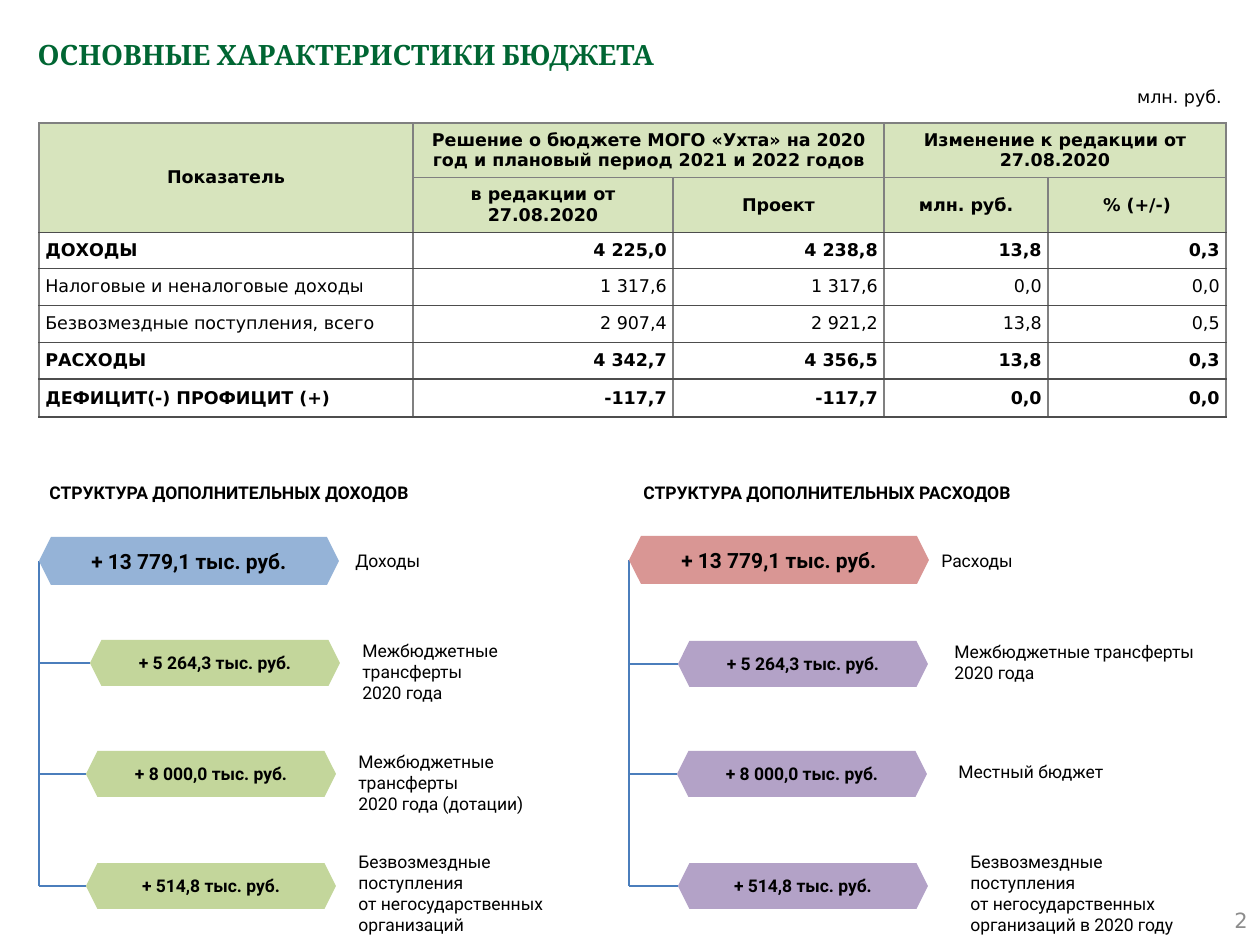
from lxml import etree
from pptx import Presentation, util as u
from pptx.dml.color import RGBColor
from pptx.enum import shapes, text
from pptx.oxml.ns import qn

PX = 914400 // 126
COLORS = {
    "title": "006633", "text": "000000", "number": "8C8C8C", "header": "D7E4BD",
    "row_line": "4D4D4D", "column_line": "808080", "branch": "4B7EBC",
    "income": "95B3D7", "income_part": "C3D69B",
    "expense": "D99694", "expense_part": "B3A2C7",
}
LEFT, CENTER, RIGHT = text.PP_ALIGN.LEFT, text.PP_ALIGN.CENTER, text.PP_ALIGN.RIGHT
TOP, MIDDLE = text.MSO_ANCHOR.TOP, text.MSO_ANCHOR.MIDDLE

COLUMNS = [374, 260, 211, 164, 178]
ROWS = [53, 54, 36, 37, 37, 37, 38]
INDICATORS = [
    ["Показатель", "Решение о бюджете МОГО «Ухта» на 2020 год и плановый период 2021 и 2022 годов",
     "", "Изменение к редакции от 27.08.2020", ""],
    ["", "в редакции от 27.08.2020", "Проект", "млн. руб.", "% (+/-)"],
    ["ДОХОДЫ", "4 225,0", "4 238,8", "13,8", "0,3"],
    ["Налоговые и неналоговые доходы", "1 317,6", "1 317,6", "0,0", "0,0"],
    ["Безвозмездные поступления, всего", "2 907,4", "2 921,2", "13,8", "0,5"],
    ["РАСХОДЫ", "4 342,7", "4 356,5", "13,8", "0,3"],
    ["ДЕФИЦИТ(-) ПРОФИЦИТ (+)", "-117,7", "-117,7", "0,0", "0,0"],
]
HEADER_ROWS = 2
PLAIN_ROWS = (3, 4)
MERGES = [((0, 0), (1, 0)), ((0, 1), (0, 2)), ((0, 3), (0, 4))]

TOTAL = "+ 13 779,1 тыс. руб."
PART_AMOUNTS = ["+ 5 264,3 тыс. руб.", "+ 8 000,0 тыс. руб.", "+ 514,8 тыс. руб."]
TOTAL_SIZE, PART_SIZE = (300, 48), (250, 46)
# parts: badge position, label box (left, top, width), label paragraphs
STRUCTURES = [
    {"heading": ("СТРУКТУРА ДОПОЛНИТЕЛЬНЫХ ДОХОДОВ", 37), "colors": ("income", "income_part"),
     "total": (39, 537), "name": ("Доходы", 343),
     "parts": [
         ((90, 640), (350, 634, 258), ["Межбюджетные трансферты", "2020 года"]),
         ((86, 751), (346, 745, 258), ["Межбюджетные трансферты", "2020 года (дотации)"]),
         ((86, 863), (346, 845, 258),
          ["Безвозмездные поступления", "от негосударственных организаций"])]},
    {"heading": ("СТРУКТУРА ДОПОЛНИТЕЛЬНЫХ РАСХОДОВ", 631), "colors": ("expense", "expense_part"),
     "total": (629, 536), "name": ("Расходы", 929),
     "parts": [
         ((678, 641), (942, 635, 271), ["Межбюджетные трансферты", "2020 года"]),
         ((677, 751), (946, 755, 311), ["Местный бюджет"]),
         ((678, 863), (958, 845, 258),
          ["Безвозмездные поступления", "от негосударственных организаций в 2020 году"])]},
]


def emu(*lengths):
    return [u.Emu(length * PX) for length in lengths]


def rgb(color):
    return RGBColor.from_string(COLORS[color])


def set_values(target, **values):
    for name, value in values.items():
        setattr(target, name, value)


def write(frame, paragraphs, size=10, font="Roboto", color="text", bold=False,
          align=LEFT, spacing=None):
    for index, words in enumerate(paragraphs):
        paragraph = frame.add_paragraph() if index else frame.paragraphs[0]
        set_values(paragraph, alignment=align, line_spacing=spacing)
        run = paragraph.add_run()
        run.text = words
        set_values(run.font, size=u.Pt(size), name=font, bold=bold)
        run.font.color.rgb = rgb(color)


def add_title(slide, words):
    title = slide.shapes.title
    left, top, width, height = emu(25, 25, 1211, 100)
    set_values(title, left=left, top=top, width=width, height=height)
    title.text_frame.vertical_anchor = TOP
    write(title.text_frame, [words], 16, "Cambria", "title", True, spacing=1.2)


def add_text(slide, box, paragraphs, anchor=TOP, wrap=True, **style):
    frame = slide.shapes.add_textbox(*emu(*box)).text_frame
    set_values(frame, word_wrap=wrap, vertical_anchor=anchor)
    write(frame, paragraphs, **style)


def add_badge(slide, position, extent, amount, color, size):
    badge = slide.shapes.add_shape(shapes.MSO_SHAPE.HEXAGON, *emu(*position, *extent))
    badge.shadow.inherit = False
    badge.fill.solid()
    badge.fill.fore_color.rgb = rgb(color)
    badge.line.fill.background()
    set_values(badge.text_frame, word_wrap=False, vertical_anchor=MIDDLE, margin_left=0,
               margin_right=0, margin_top=0, margin_bottom=0)
    write(badge.text_frame, [amount], size, bold=True, align=CENTER)


def add_branch(slide, start, end):
    branch = slide.shapes.add_connector(shapes.MSO_CONNECTOR.STRAIGHT, *emu(*start, *end))
    branch.line.color.rgb = rgb("branch")
    branch.line.width = u.Pt(0.75)
    etree.SubElement(branch.element.spPr, qn("a:effectLst"))


def set_borders(cell, **sides):
    properties = cell._tc.get_or_add_tcPr()
    for side, color in sides.items():
        line = etree.SubElement(properties, qn(f"a:ln{side}"), w=str(u.Pt(1)))
        fill = etree.SubElement(line, qn("a:solidFill"))
        etree.SubElement(fill, qn("a:srgbClr"), val=COLORS[color])


def add_indicators(slide):
    table = slide.shapes.add_table(
        len(ROWS), len(COLUMNS), *emu(39, 123, sum(COLUMNS), sum(ROWS))).table
    set_values(table, first_row=False, horz_banding=False)
    for column, width in zip(table.columns, emu(*COLUMNS)):
        column.width = width
    for row, height in zip(table.rows, emu(*ROWS)):
        row.height = height
    for first, last in MERGES:
        table.cell(*first).merge(table.cell(*last))
    margin = u.Inches(0.05)
    for r, values in enumerate(INDICATORS):
        header = r < HEADER_ROWS
        for c, value in enumerate(values):
            cell = table.cell(r, c)
            set_values(cell, vertical_anchor=MIDDLE, margin_left=margin, margin_right=margin,
                       margin_top=margin, margin_bottom=margin)
            set_borders(cell, L="column_line", R="column_line",
                        T="column_line" if header else "row_line",
                        B="column_line" if r == 0 else "row_line")
            if header:
                cell.fill.solid()
                cell.fill.fore_color.rgb = rgb("header")
            else:
                cell.fill.background()
            if value:
                write(cell.text_frame, [value], font="DejaVu Sans", bold=r not in PLAIN_ROWS,
                      align=CENTER if header else RIGHT if c else LEFT)


def add_structure(slide, structure):
    """Draw a total with its parts hanging from a vertical trunk."""
    heading, heading_left = structure["heading"]
    name, name_left = structure["name"]
    total_color, part_color = structure["colors"]
    trunk, total_top = structure["total"]
    half = PART_SIZE[1] // 2
    last_top = structure["parts"][-1][0][1]

    add_text(slide, (heading_left, 476, 420, 34), [heading], wrap=False, bold=True)
    add_branch(slide, (trunk, total_top + TOTAL_SIZE[1] // 2), (trunk, last_top + half))
    add_badge(slide, structure["total"], TOTAL_SIZE, TOTAL, total_color, 12)
    add_text(slide, (name_left, 544, 262, 34), [name])
    for amount, (position, label, words) in zip(PART_AMOUNTS, structure["parts"]):
        left, top = position
        add_branch(slide, (trunk, top + half), (left, top + half))
        add_badge(slide, position, PART_SIZE, amount, part_color, 10)
        add_text(slide, (*label, 34 + 21 * (len(words) - 1)), words)


def main():
    deck = Presentation()
    deck.slide_width, deck.slide_height = u.Inches(10), u.Inches(7.5)
    slide = deck.slides.add_slide(deck.slide_layouts[5])
    add_title(slide, "ОСНОВНЫЕ ХАРАКТЕРИСТИКИ БЮДЖЕТА")
    add_text(slide, (1077, 83, 157, 27), ["млн. руб."], MIDDLE, font="DejaVu Sans", align=RIGHT)
    add_indicators(slide)
    for structure in STRUCTURES:
        add_structure(slide, structure)
    add_text(slide, (966, 895, 294, 50), ["2"], MIDDLE, size=12, font="DejaVu Sans",
             color="number", align=RIGHT)
    deck.save("out.pptx")


if __name__ == "__main__":
    main()
